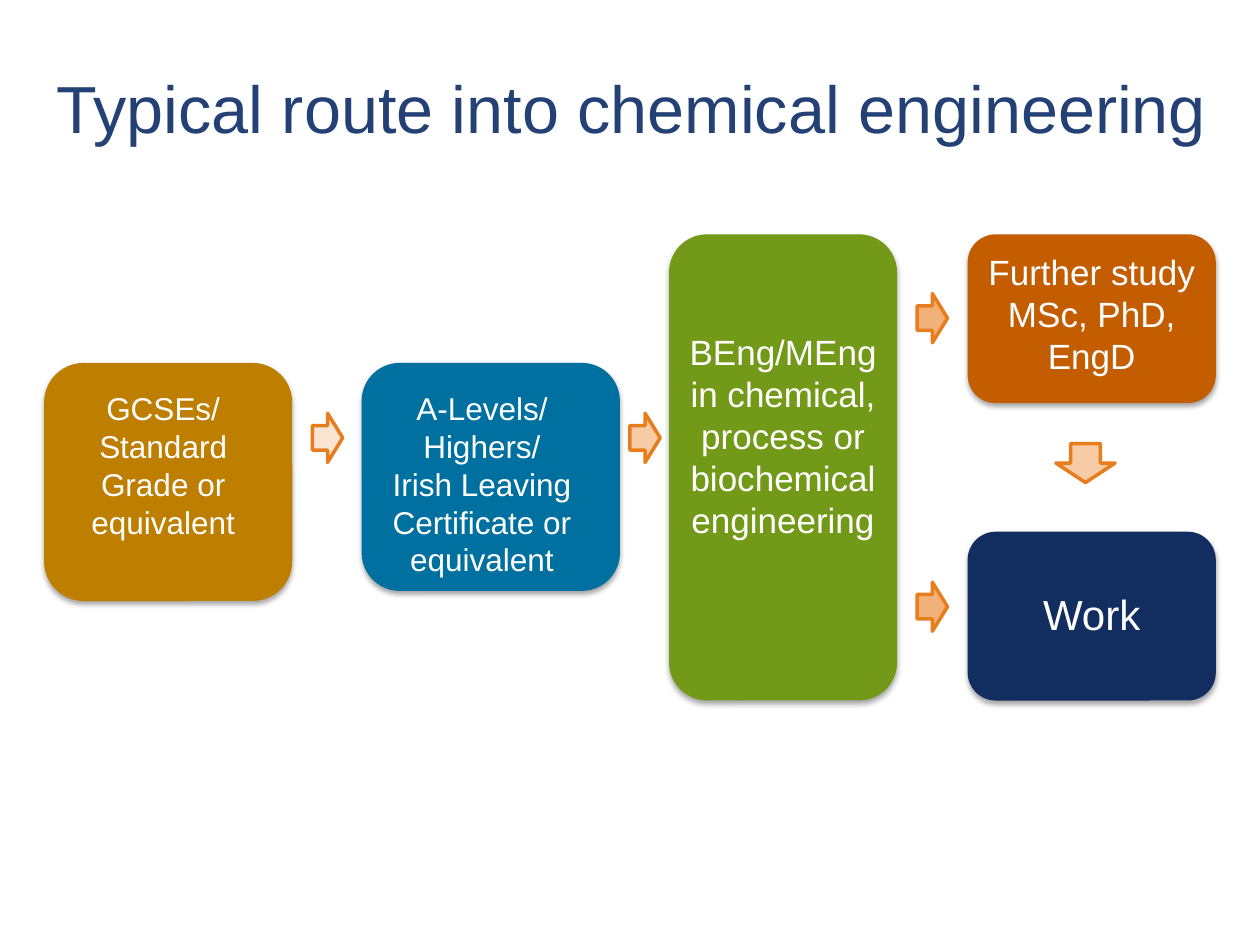
from lxml.etree import SubElement
from pptx import Presentation
from pptx.dml.color import RGBColor
from pptx.enum.shapes import MSO_SHAPE
from pptx.enum.text import MSO_ANCHOR, PP_ALIGN
from pptx.oxml.ns import qn
from pptx.util import Inches, Pt

FONT = "Arial"
COLORS = {
    "title": "244175", "white": "FFFFFF", "shadow": "000000",
    "school": "BE7E00", "college": "0070A0", "degree": "729A18",
    "study": "C45C00", "work": "122E60",
    "arrow_line": "E87D1E", "arrow_pale": "FAE5D2",
    "arrow_mid": "F6CBA5", "arrow_deep": "F1B178",
}

# box (left, top, width, height), text box relative to it, colour, size, paragraphs
STAGES = [
    ((0.35, 2.88, 1.97, 1.89), (0, 0.16, 1.89, 1.31), "school", 18,
     ["GCSEs/", "Standard Grade or equivalent"]),
    ((2.87, 2.88, 2.05, 1.81), (-0.07, 0.16, 2.05, 1.62), "college", 18,
     ["A-Levels/", "Highers/", "Irish Leaving Certificate or equivalent"]),
    ((5.31, 1.86, 1.81, 3.7), (0, 0.71, 1.81, 1.78), "degree", 20,
     ["BEng/MEng in chemical, process or biochemical engineering"]),
    ((7.68, 1.86, 1.97, 1.34), (0, 0.08, 1.97, 1.11), "study", 20,
     ["Further study MSc, PhD, EngD"]),
    ((7.68, 4.22, 1.97, 1.34), (0, 0.4, 1.97, 0.5), "work", 24, ["Work"]),
]

ARROW_SIZE = (0.24, 0.39)
ARROWS = [
    ((2.48, 3.28, *ARROW_SIZE), "arrow_pale", 0),
    ((5, 3.28, *ARROW_SIZE), "arrow_mid", 0),
    ((7.28, 2.33, *ARROW_SIZE), "arrow_deep", 0),
    ((7.28, 4.62, *ARROW_SIZE), "arrow_deep", 0),
    ((8.46, 3.44, 0.31, 0.47), "arrow_mid", 90),
]


def rgb(name):
    return RGBColor.from_string(COLORS[name])


def add_text(s, box, lines, size, color, align, anchor=MSO_ANCHOR.TOP):
    tf = s.shapes.add_textbox(*map(Inches, box)).text_frame
    tf.word_wrap = True
    tf.vertical_anchor = anchor
    for i, line in enumerate(lines):
        p = tf.paragraphs[0] if i == 0 else tf.add_paragraph()
        p.text = line
        p.alignment = align
        p.font.name = FONT
        p.font.size = Pt(size)
        p.font.color.rgb = rgb(color)


def add_filled(s, kind, box, color):
    sp = s.shapes.add_shape(kind, *map(Inches, box))
    sp.shadow.inherit = False
    sp.fill.solid()
    sp.fill.fore_color.rgb = rgb(color)
    return sp


def add_soft_shadow(sp):
    effects = sp._element.spPr.find(qn("a:effectLst"))
    shadow = SubElement(effects, qn("a:outerShdw"), blurRad=str(Pt(3.1)),
                        dist=str(Pt(1.8)), dir="5400000", rotWithShape="0")
    clr = SubElement(shadow, qn("a:srgbClr"), val=COLORS["shadow"])
    SubElement(clr, qn("a:alpha"), val="35000")


def add_stage(s, box, text_box, color, size, lines):
    sp = add_filled(s, MSO_SHAPE.ROUNDED_RECTANGLE, box, color)
    sp.line.fill.background()
    add_soft_shadow(sp)
    dx, dy, width, height = text_box
    add_text(s, (box[0] + dx, box[1] + dy, width, height), lines, size,
             "white", PP_ALIGN.CENTER)


def add_arrow(s, box, color, rotation):
    sp = add_filled(s, MSO_SHAPE.RIGHT_ARROW, box, color)
    sp.line.color.rgb = rgb("arrow_line")
    sp.line.width = Pt(2)
    sp.rotation = rotation


def main():
    prs = Presentation()
    prs.slide_width, prs.slide_height = Inches(10), Inches(7.5)
    s = prs.slides.add_slide(prs.slide_layouts[6])
    add_text(s, (0.35, 0.3, 9.37, 1.09),
             ["Typical route into chemical engineering"], 38, "title",
             PP_ALIGN.LEFT, MSO_ANCHOR.MIDDLE)
    for stage in STAGES:
        add_stage(s, *stage)
    for arrow in ARROWS:
        add_arrow(s, *arrow)
    prs.save("out.pptx")


if __name__ == "__main__":
    main()
